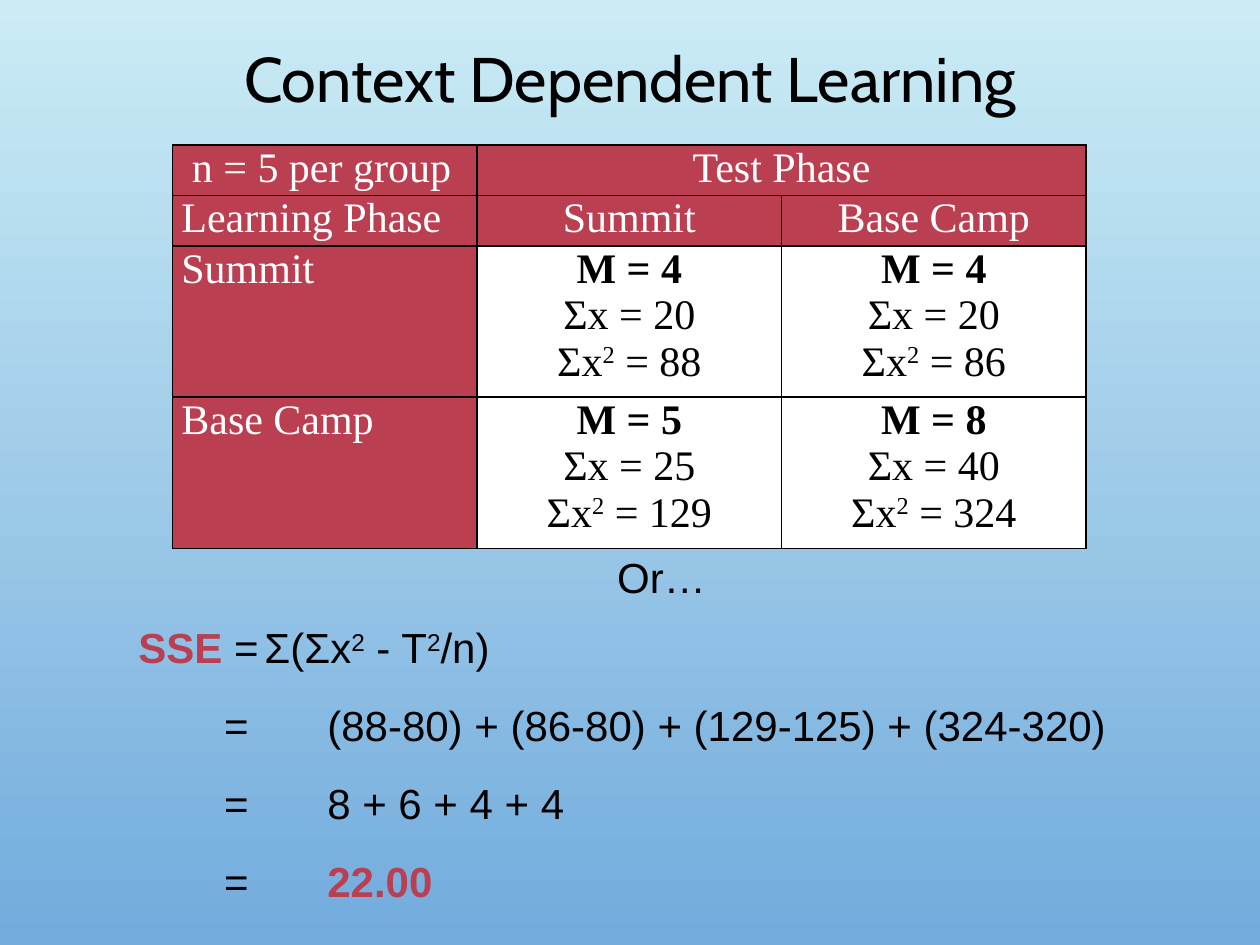
from lxml import etree
from pptx import Presentation
from pptx.dml.color import RGBColor
from pptx.enum.text import MSO_ANCHOR, PP_ALIGN
from pptx.oxml.ns import qn
from pptx.util import Inches, Pt

RED = RGBColor(0xBA, 0x3F, 0x51)
BLACK = RGBColor(0, 0, 0)
WHITE = RGBColor(0xFF, 0xFF, 0xFF)
SKY_TOP = RGBColor(0xCB, 0xEC, 0xF5)
SKY_BOTTOM = RGBColor(0x73, 0xAB, 0xDD)


def add_run(p, text, font, color=BLACK, size=24, bold=False, raised=False):
    r = p.add_run()
    r.text = text
    r.font.name, r.font.size, r.font.bold = font, Pt(size), bold
    r.font.color.rgb = color
    if raised:
        r.font._element.set("baseline", "30000")


def add_textbox(slide, box):
    tf = slide.shapes.add_textbox(*map(Inches, box)).text_frame
    tf.word_wrap = True
    return tf


def set_background(slide):
    fill = slide.background.fill
    fill.gradient()
    fill.gradient_angle = 270  # light at the top, dark at the bottom
    for stop, color, position in zip(fill.gradient_stops,
                                     (SKY_TOP, SKY_BOTTOM), (0, 1)):
        stop.color.rgb = color
        stop.position = position


def add_title(slide, box, text):
    tf = add_textbox(slide, box)
    tf.vertical_anchor = MSO_ANCHOR.MIDDLE
    p = tf.paragraphs[0]
    p.alignment, p.line_spacing = PP_ALIGN.CENTER, 0.9
    add_run(p, text, "Cabin", size=36)


def set_borders(cell):
    tcPr = cell._tc.get_or_add_tcPr()
    for i, side in enumerate(("a:lnL", "a:lnR", "a:lnT", "a:lnB")):
        ln = etree.Element(qn(side), w=str(Pt(1)))
        solid = etree.SubElement(ln, qn("a:solidFill"))
        etree.SubElement(solid, qn("a:srgbClr"), val=str(BLACK))
        tcPr.insert(i, ln)


def fill_cell(cell, lines, fill, color, align):
    """Each line is a list of (text, run options)."""
    cell.margin_left = cell.margin_right = Inches(0.07)
    cell.margin_top = cell.margin_bottom = 0
    cell.fill.solid()
    cell.fill.fore_color.rgb = fill
    set_borders(cell)
    tf = cell.text_frame
    for i, runs in enumerate(lines):
        p = tf.add_paragraph() if i else tf.paragraphs[0]
        p.alignment = align
        for text, options in runs:
            add_run(p, text, "Times New Roman", color, **options)


def stats(mean, total, squares):
    return [[(f"M = {mean}", {"bold": True})],
            [(f"Σx = {total}", {})],
            [("Σx", {}), ("2", {"raised": True}), (f" = {squares}", {})]]


def add_stats_table(slide, box):
    headers = [["\u00a0n = 5 per group", "Test Phase", ""],
               ["Learning Phase", "Summit", "Base Camp"]]
    groups = [("Summit", (4, 20, 88), (4, 20, 86)),
              ("Base Camp", (5, 25, 129), (8, 40, 324))]

    table = slide.shapes.add_table(4, 3, *map(Inches, box)).table
    for col in table.columns:
        col.width = Inches(box[2] / 3)
    # Rows grow to fit their text
    for i, row in enumerate(table.rows):
        row.height = 0 if i else Inches(0.25)
    table.cell(0, 1).merge(table.cell(0, 2))

    rows = [[[[(text, {})]] if text else [] for text in row] for row in headers]
    rows += [[[[(name, {})]], stats(*a), stats(*b)] for name, a, b in groups]
    for i, row in enumerate(rows):
        for j, lines in enumerate(row):
            heading = i < len(headers) or j == 0
            fill_cell(table.cell(i, j), lines,
                      RED if heading else WHITE,
                      WHITE if heading else BLACK,
                      PP_ALIGN.CENTER if j else PP_ALIGN.LEFT)


def set_indent(p, left, first=0):
    pPr = p._p.get_or_add_pPr()
    pPr.set("marL", str(Inches(left)))
    pPr.set("indent", str(Inches(first)))


def add_working(slide, box):
    plain, red, raised = {}, {"color": RED, "bold": True}, {"raised": True}
    formula = [("SSE ", red), ("=\tΣ(Σx", plain), ("2", raised),
               (" - T", plain), ("2", raised), ("/n)", plain)]
    steps = [[("=\t(88-80) + (86-80) + (129-125) + (324-320)", plain)],
             [("=\t8 + 6 + 4 + 4", plain)],
             [("=\t", plain), ("22.00", red)]]

    tf = add_textbox(slide, box)
    for i, runs in enumerate([[("Or…", plain)], formula] + steps):
        p = tf.add_paragraph() if i else tf.paragraphs[0]
        if i < 2:
            set_indent(p, 0.5)
        else:
            set_indent(p, 2, -0.82)  # hanging: results line up after "="
        p.alignment = PP_ALIGN.LEFT if i else PP_ALIGN.CENTER
        p.line_spacing = 1.2
        if i:
            p.space_before = Pt(5.5 if i == 1 else 10)
        for text, options in runs:
            add_run(p, text, "Arial", **options)


def main():
    prs = Presentation()
    prs.slide_width, prs.slide_height = Inches(10), Inches(7.5)
    slide = prs.slides.add_slide(prs.slide_layouts[6])
    set_background(slide)
    add_working(slide, (0.5, 4.25, 9, 2.75))
    add_title(slide, (0.5, 0.3, 9, 0.7), "Context Dependent Learning")
    add_stats_table(slide, (1.37, 1.15, 7.25, 3.2))
    prs.save("out.pptx")


if __name__ == "__main__":
    main()
